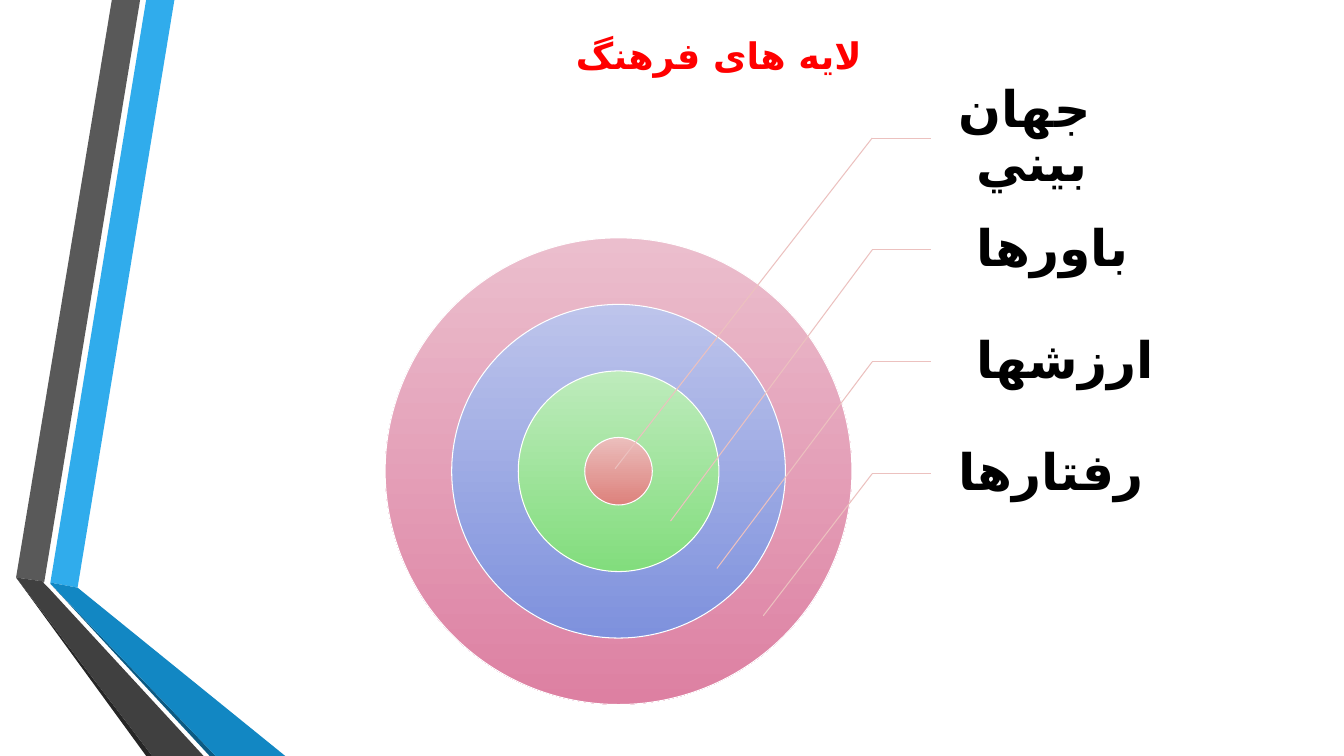
"""Build the slide on the layers of culture."""
from dataclasses import dataclass

import lxml.etree
import pptx
import pptx.dml.color
import pptx.enum.shapes
import pptx.enum.text
import pptx.oxml.ns
import pptx.util

PX = 9144
FONT = "Cabin"
ARABIC_FONT = "DejaVu Sans"
LEADER_COLOUR = "ECC1BF"
ROW_STEP = 111
RING_STEP = 66
ELBOW_X = 865
LABEL_X = 923
LABEL_WIDTH = 232
LABEL_HEIGHT = 110


@dataclass
class Band:
    """A flat polygon of the side decoration."""
    colour: str
    points: list[tuple[int, int]]


@dataclass
class Ring:
    """A circle shaded from top to bottom."""
    top_colour: str
    bottom_colour: str


@dataclass
class Layer:
    """A named layer and the point its leader reaches."""
    name: str
    target: tuple[int, int]


BANDS = [
    Band("30ACEC", [(50, 578), (77, 583), (173, 0), (145, 0)]),
    Band("595959", [(139, 0), (111, 0), (16, 573), (44, 577)]),
    Band("262626", [(16, 573), (145, 750), (151, 750)]),
    Band("0C5A82", [(50, 579), (208, 750), (214, 750)]),
    Band("1287C3", [(50, 578), (50, 579), (214, 750), (283, 750), (77, 583)]),
    Band("404040", [(202, 750), (48, 583), (43, 578), (44, 577), (16, 573), (151, 750)]),
]
RINGS = [
    Ring("EBBECD", "DD80A2"),
    Ring("BDC4EB", "7E91DD"),
    Ring("BEEBBC", "82DD7D"),
    Ring("EBBEBC", "DD817C"),
]
LAYERS = [
    Layer("جهان بيني ", (610, 465)),
    Layer("باورها ", (665, 517)),
    Layer("ارزشها ", (711, 564)),
    Layer("رفتارها", (757, 611)),
]


def px(*lengths: int) -> list[int]:
    """Turn px into EMU."""
    return [length * PX for length in lengths]


def colour(value: str) -> pptx.dml.color.RGBColor:
    """Turn a hex string into a colour."""
    return pptx.dml.color.RGBColor.from_string(value)


def apply_format(target, values: dict) -> None:
    """Set each named attribute on the target."""
    for name, value in values.items():
        setattr(target, name, value)


def write_rtl(frame, text: str, size: float, hue: str, frame_format: dict,
              paragraph_format: dict) -> None:
    """Write one bold right-to-left paragraph."""
    apply_format(frame, frame_format)
    paragraph = frame.paragraphs[0]
    apply_format(paragraph, paragraph_format)
    paragraph._p.get_or_add_pPr().set("rtl", "1")
    run = paragraph.add_run()
    run.text = text
    apply_format(run.font, {"name": FONT, "size": pptx.util.Pt(size), "bold": True})
    run.font.color.rgb = colour(hue)
    script_font = lxml.etree.SubElement(run.font._element, pptx.oxml.ns.qn("a:cs"))
    script_font.set("typeface", ARABIC_FONT)


def draw_band(shapes, band: Band) -> None:
    """Draw one decoration polygon."""
    builder = shapes.build_freeform(*band.points[0], scale=PX)
    builder.add_line_segments(band.points[1:], close=True)
    outline = builder.convert_to_shape()
    outline.shadow.inherit = False
    outline.fill.solid()
    outline.fill.fore_color.rgb = colour(band.colour)
    outline.line.fill.background()


def draw_ring(shapes, ring: Ring, index: int) -> None:
    """Draw one circle, each further one nested in the last."""
    inset = RING_STEP * index
    diameter = 463 - 2 * inset
    circle = shapes.add_shape(pptx.enum.shapes.MSO_SHAPE.OVAL,
                              *px(382 + inset, 236 + inset, diameter, diameter))
    circle.shadow.inherit = False
    circle.fill.gradient()
    circle.fill.gradient_angle = 270
    for stop, hue in zip(circle.fill.gradient_stops, (ring.top_colour, ring.bottom_colour)):
        stop.color.rgb = colour(hue)
    circle.line.color.rgb = colour("FFFFFF")
    circle.line.width = pptx.util.Pt(0.75)


def draw_leader(shapes, start: tuple[int, int], end: tuple[int, int]):
    """Draw one straight leader and return it."""
    leader = shapes.add_connector(pptx.enum.shapes.MSO_CONNECTOR.STRAIGHT,
                                  *px(*start, *end))
    leader.line.color.rgb = colour(LEADER_COLOUR)
    leader.line.width = pptx.util.Pt(0.75)
    lxml.etree.SubElement(leader._element.spPr, pptx.oxml.ns.qn("a:effectLst"))
    return leader


def draw_layer(shapes, layer: Layer, index: int) -> None:
    """Draw the label of a layer and its two leaders."""
    top = 82 + ROW_STEP * index
    elbow = (ELBOW_X, top + LABEL_HEIGHT // 2)
    label = shapes.add_textbox(*px(LABEL_X, top, LABEL_WIDTH, LABEL_HEIGHT))
    inset_left, inset = px(28, 5)
    write_rtl(label.text_frame, layer.name, 36, "000000",
              {"word_wrap": True, "vertical_anchor": pptx.enum.text.MSO_ANCHOR.MIDDLE,
               "margin_left": inset_left, "margin_top": inset,
               "margin_right": inset, "margin_bottom": inset},
              {"alignment": pptx.enum.text.PP_ALIGN.LEFT, "line_spacing": 0.9})
    draw_leader(shapes, elbow, (LABEL_X, elbow[1])).end_connect(label, 1)
    draw_leader(shapes, elbow, layer.target)


def main() -> None:
    """Build and save the slide."""
    deck = pptx.Presentation()
    deck.slide_width, deck.slide_height = px(1333, 750)
    slide = deck.slides.add_slide(deck.slide_layouts[5])
    title = slide.shapes.title
    title.left, title.top, title.width, title.height = px(165, 60, 1096, 44)
    write_rtl(title.text_frame, "لايه های فرهنگ", 26.1, "FF0000",
              {"word_wrap": True, "auto_size": pptx.enum.text.MSO_AUTO_SIZE.NONE,
               "vertical_anchor": pptx.enum.text.MSO_ANCHOR.BOTTOM,
               "margin_top": 0, "margin_bottom": px(28)[0]},
              {"alignment": pptx.enum.text.PP_ALIGN.CENTER})
    for band in BANDS:
        draw_band(slide.shapes, band)
    for index, ring in enumerate(RINGS):
        draw_ring(slide.shapes, ring, index)
    for index, layer in enumerate(LAYERS):
        draw_layer(slide.shapes, layer, index)
    deck.save("out.pptx")


if __name__ == "__main__":
    main()
